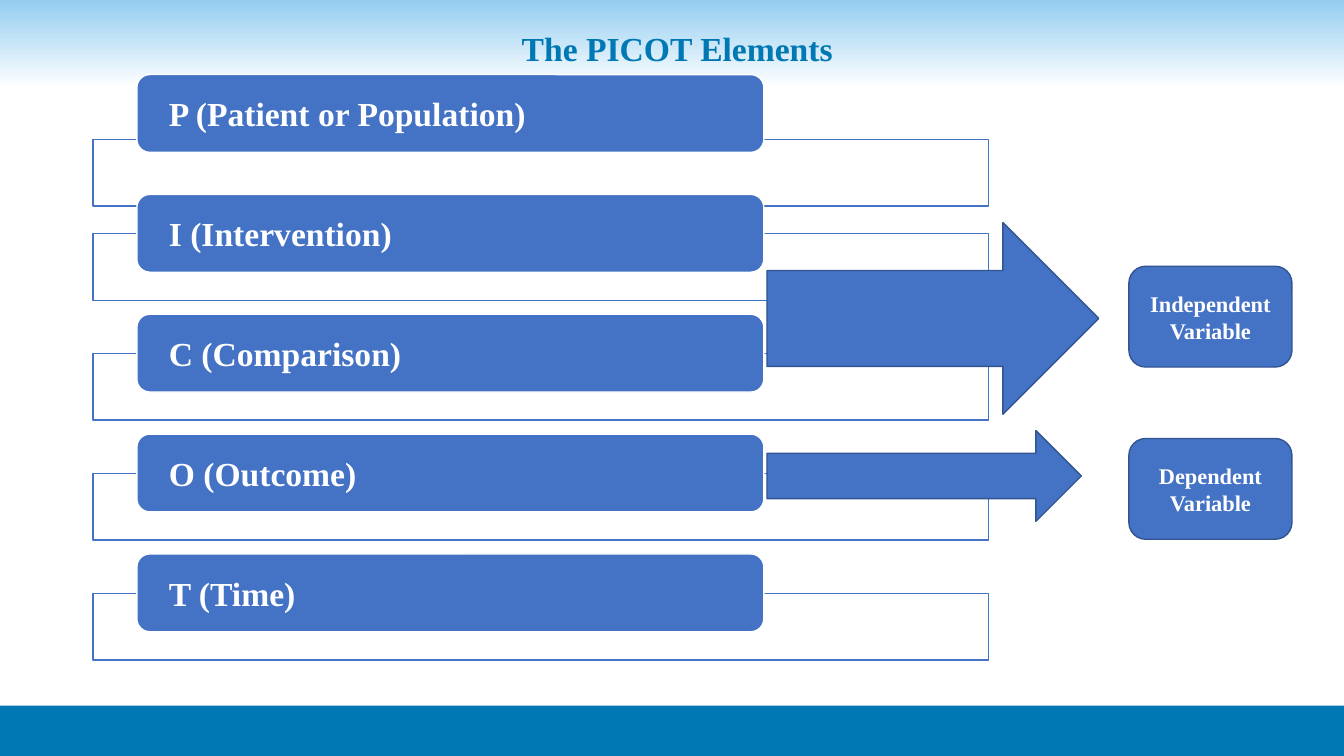
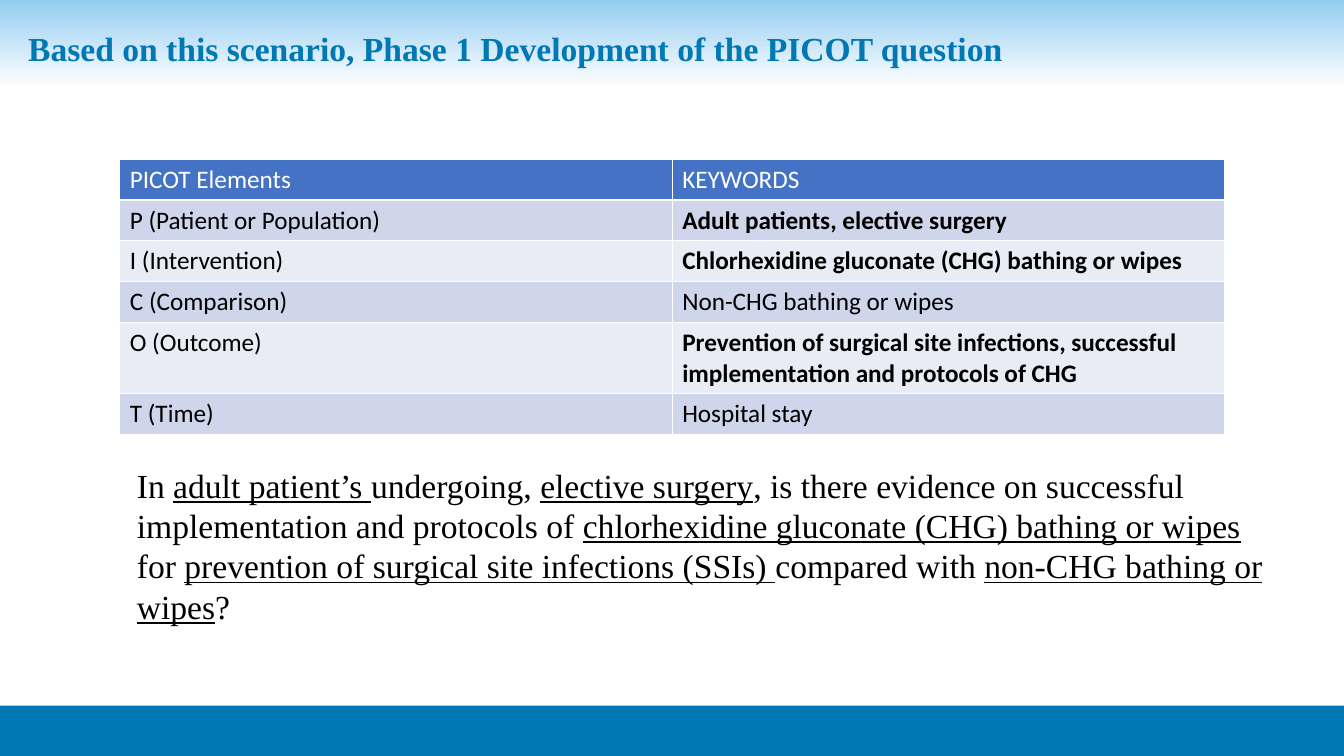
from dataclasses import dataclass

from lxml.etree import SubElement
from pptx import Presentation
from pptx.dml.color import RGBColor
from pptx.enum.shapes import MSO_SHAPE as Shape
from pptx.enum.text import MSO_ANCHOR as Anchor, PP_ALIGN as Align
from pptx.oxml.ns import qn
from pptx.util import Cm, Pt


@dataclass(frozen=True)
class Theme:
    sky: str = "92CCF0"
    ocean: str = "0078B3"
    blue: str = "4472C4"
    navy: str = "325491"
    white: str = "FFFFFF"
    black: str = "000000"
    bands: tuple = ("CFD5EA", "E9EBF5")
    serif: str = "Times New Roman"
    sans: str = "Calibri"
    large: int = 24
    medium: int = 18
    small: int = 16


THEME = Theme()
WIDTH, HEIGHT = 33.87, 19.05
ELEMENTS = ("P (Patient or Population)", "I (Intervention)", "C (Comparison)",
            "O (Outcome)", "T (Time)")
KEYWORDS = (
    ("Adult patients, elective surgery", True),
    ("Chlorhexidine gluconate (CHG) bathing or wipes", True),
    ("Non-CHG bathing or wipes", False),
    ("Prevention of surgical site infections, successful "
     "implementation and protocols of CHG", True),
    ("Hospital stay", False),
)
QUESTION = (
    "In ", "adult patient’s ", "undergoing, ", "elective surgery",
    ", is there evidence on successful implementation and protocols of ",
    "chlorhexidine gluconate (CHG) bathing or wipes ", "for ",
    "prevention of surgical site infections (SSIs) ", "compared with ",
    "non-CHG bathing or wipes", "?",
)


def apply(target, values):
    for name, value in values.items():
        setattr(target, name, value)


def style_font(font, color, size, name=THEME.serif, **values):
    apply(font, {"name": name, "size": Pt(size), **values})
    font.color.rgb = RGBColor.from_string(color)


class Deck:
    def __init__(self):
        self.presentation = Presentation()
        apply(self.presentation, {"slide_width": Cm(WIDTH), "slide_height": Cm(HEIGHT)})
        self.slide = None

    def new_slide(self, title, align=Align.LEFT):
        self.slide = self.presentation.slides.add_slide(self.presentation.slide_layouts[6])
        header = self.shape(Shape.RECTANGLE, (0, -0.03, WIDTH, 2.24), THEME.sky)
        header.fill.gradient()
        header.fill.gradient_angle = 270
        for stop, color in zip(header.fill.gradient_stops, (THEME.sky, THEME.white)):
            stop.color.rgb = RGBColor.from_string(color)
        self.shape(Shape.RECTANGLE, (0, 17.78, WIDTH, 1.27), THEME.ocean)
        frame = self.text((0.46, 0.53, 33.43, 1.47), (title,), THEME.ocean, bold=True)
        frame.vertical_anchor = Anchor.MIDDLE
        apply(frame.paragraphs[0], {"alignment": align, "line_spacing": 0.9})

    def shape(self, kind, box, fill, line=None):
        shape = self.slide.shapes.add_shape(kind, *map(Cm, box))
        shape.shadow.inherit = False
        shape.fill.solid()
        shape.fill.fore_color.rgb = RGBColor.from_string(fill)
        if line:
            shape.line.color.rgb = RGBColor.from_string(line)
            shape.line.width = Pt(1)
        else:
            shape.line.fill.background()
        return shape

    def label(self, box, lines, size, line, align, inset=0.25):
        shape = self.shape(Shape.ROUNDED_RECTANGLE, box, THEME.blue, line)
        frame = shape.text_frame
        apply(frame, {"text": "\n".join(lines), "word_wrap": True,
                      "vertical_anchor": Anchor.MIDDLE,
                      "margin_left": Cm(inset), "margin_right": Cm(inset)})
        for paragraph in frame.paragraphs:
            paragraph.alignment = align
            style_font(paragraph.font, THEME.white, size, bold=True)

    def text(self, box, parts, color, bold=False):
        frame = self.slide.shapes.add_textbox(*map(Cm, box)).text_frame
        frame.word_wrap = True
        for index, part in enumerate(parts):
            run = frame.paragraphs[0].add_run()
            run.text = part
            style_font(run.font, color, THEME.large, bold=bold, underline=index % 2 == 1)
        return frame

    def cell(self, cell, text, fill, color, bold=False):
        properties = cell._tc.get_or_add_tcPr()
        for side in ("lnL", "lnR", "lnT", "lnB"):
            border = SubElement(properties, qn(f"a:{side}"), w=str(Pt(1)))
            SubElement(SubElement(border, qn("a:solidFill")), qn("a:srgbClr"), val=THEME.white)
        cell.fill.solid()
        cell.fill.fore_color.rgb = RGBColor.from_string(fill)
        cell.text = text
        style_font(cell.text_frame.paragraphs[0].runs[0].font, color, THEME.medium,
                   THEME.sans, bold=bold)

    def table(self, box, headings, rows, heights):
        table = self.slide.shapes.add_table(
            len(rows) + 1, len(headings), *map(Cm, box)).table
        for row, height in zip(table.rows, heights):
            row.height = Cm(height)
        for column, heading in enumerate(headings):
            self.cell(table.cell(0, column), heading, THEME.blue, THEME.white)
        for index, (element, (keyword, bold)) in enumerate(rows):
            band = THEME.bands[index % 2]
            self.cell(table.cell(index + 1, 0), element, band, THEME.black)
            self.cell(table.cell(index + 1, 1), keyword, band, THEME.black, bold)


def elements_slide(deck):
    deck.new_slide("The PICOT Elements ", Align.CENTER)
    for index, element in enumerate(ELEMENTS):
        top = 1.88 + index * 3.02
        drop = 0.99 if index else 1.63
        deck.shape(Shape.RECTANGLE, (2.34, top + drop, 22.58, 1.68), THEME.white, THEME.blue)
        deck.label((3.45, top, 15.8, 1.96), (element,), THEME.large, THEME.white,
                   Align.LEFT, 0.71)
    variables = (
        ("Independent", 6.71, (5.61, 8.36, 4.83)),
        ("Dependent", 11.05, (10.85, 7.92, 2.29)),
    )
    for name, label_top, (top, width, height) in variables:
        deck.shape(Shape.RIGHT_ARROW, (19.33, top, width, height), THEME.blue, THEME.navy)
        deck.label((28.45, label_top, 4.11, 2.54), (name, "Variable"), THEME.small,
                   THEME.navy, Align.CENTER)


def question_slide(deck):
    deck.new_slide("Based on this scenario, Phase 1 Development of the PICOT question")
    deck.table((3.02, 4.01, 27.84, 6.94), ("PICOT Elements", "KEYWORDS"),
               tuple(zip(ELEMENTS, KEYWORDS)), (1.03, 1.03, 1.03, 1.03, 1.79, 1.03))
    deck.text((3.2, 11.58, 28.96, 5.13), QUESTION, THEME.black)


def main():
    deck = Deck()
    elements_slide(deck)
    question_slide(deck)
    deck.presentation.save("out.pptx")


if __name__ == "__main__":
    main()
